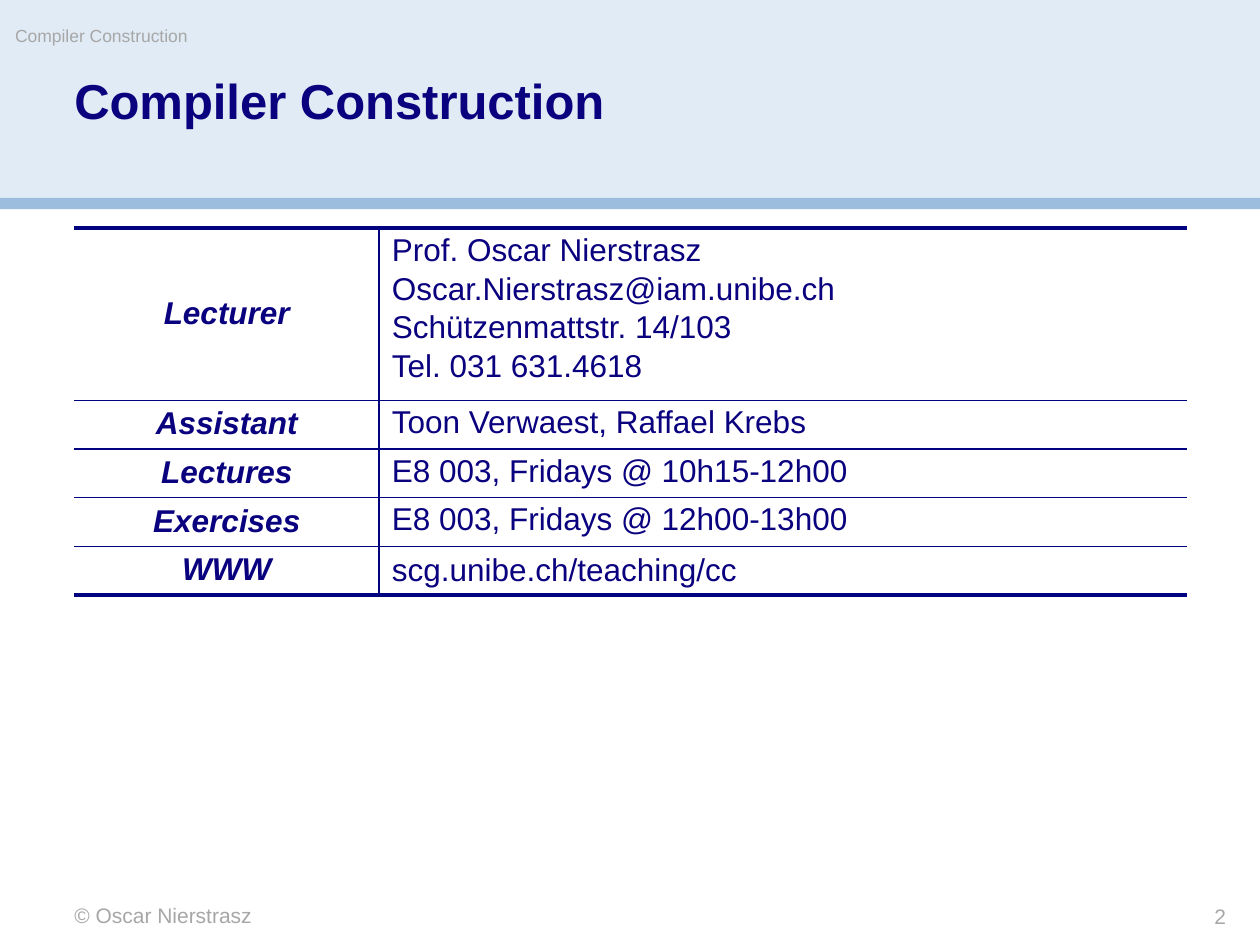
from pptx import Presentation
from pptx.dml.color import RGBColor
from pptx.enum.shapes import MSO_SHAPE
from pptx.enum.text import MSO_ANCHOR, PP_ALIGN
from pptx.oxml.ns import qn
from pptx.util import Inches, Pt
from lxml.etree import SubElement

NAVY = "0A017F"
RULE = "00027F"
GREY = "A7A7A7"

ROWS = [
    ("Lecturer", ["Prof. Oscar Nierstrasz", "Oscar.Nierstrasz@iam.unibe.ch",
                  "Schützenmattstr. 14/103", "Tel. 031 631.4618"]),
    ("Assistant", ["Toon Verwaest, Raffael Krebs"]),
    ("Lectures", ["E8 003, Fridays @ 10h15-12h00"]),
    ("Exercises", ["E8 003, Fridays @ 12h00-13h00"]),
    ("WWW", ["scg.unibe.ch/teaching/cc"]),
]


def rgb(value):
    return RGBColor.from_string(value)


def add_run(p, text, size, color, bold=False, italic=False):
    r = p.add_run()
    r.text = text
    r.font.name = "Arial"
    r.font.size = Pt(size)
    r.font.bold = bold
    r.font.italic = italic
    r.font.color.rgb = rgb(color)


def add_band(s, top, height, color):
    sp = s.shapes.add_shape(MSO_SHAPE.RECTANGLE, 0, Inches(top), Inches(10), Inches(height))
    sp.shadow.inherit = False
    sp.fill.solid()
    sp.fill.fore_color.rgb = rgb(color)
    sp.line.fill.background()


def add_text(s, box, text, size, color, bold=False, align=PP_ALIGN.LEFT, spacing=1.0, wrap=True):
    tf = s.shapes.add_textbox(*map(Inches, box)).text_frame
    tf.margin_left = tf.margin_top = tf.margin_right = tf.margin_bottom = 0
    tf.word_wrap = wrap
    p = tf.paragraphs[0]
    p.alignment = align
    p.line_spacing = spacing
    add_run(p, text, size, color, bold)


def set_borders(cell, **widths):
    tc_pr = cell._tc.get_or_add_tcPr()
    for i, side in enumerate("LRTB"):
        width = widths.get(side, 0)
        ln = tc_pr.makeelement(qn(f"a:ln{side}"), {"w": str(Pt(width))})
        if width:
            fill = SubElement(ln, qn("a:solidFill"))
            SubElement(fill, qn("a:srgbClr"), val=RULE)
        else:
            SubElement(ln, qn("a:noFill"))
        tc_pr.insert(i, ln)


def fill_cell(cell, lines, align, anchor, emphasis):
    cell.fill.background()
    cell.vertical_anchor = anchor
    cell.margin_left = cell.margin_right = Inches(0.1)
    cell.margin_top = cell.margin_bottom = Inches(0.05)
    tf = cell.text_frame
    for i, line in enumerate(lines):
        p = tf.add_paragraph() if i else tf.paragraphs[0]
        p.alignment = align
        p.line_spacing = 0.95
        p.space_before = Pt(3.1 if i else 0)
        add_run(p, line, 18, NAVY, emphasis, emphasis)


def add_course_table(s):
    frame = s.shapes.add_table(len(ROWS), 2, Inches(0.59), Inches(1.81), Inches(8.83), Inches(2.77))
    table = frame.table
    table.first_row = table.horz_banding = False
    for column, width in zip(table.columns, (2.42, 6.41)):
        column.width = Inches(width)
    last = len(ROWS) - 1
    for i, (label, lines) in enumerate(ROWS):
        table.rows[i].height = Inches(0.36 if i else 1.31)
        top = 1 if i else 2.25
        bottom = 2.25 if i == last else 1
        head, body = table.cell(i, 0), table.cell(i, 1)
        fill_cell(head, [label], PP_ALIGN.CENTER, MSO_ANCHOR.MIDDLE, True)
        fill_cell(body, lines, PP_ALIGN.LEFT,
                  MSO_ANCHOR.BOTTOM if i == last else MSO_ANCHOR.TOP, False)
        set_borders(head, R=1, T=top, B=bottom)
        set_borders(body, L=1, T=top, B=bottom)


def main():
    prs = Presentation()
    prs.slide_width, prs.slide_height = Inches(10), Inches(7.5)
    s = prs.slides.add_slide(prs.slide_layouts[6])
    add_band(s, 0, 1.58, "E1EBF5")
    add_band(s, 1.57, 0.09, "9CBDDE")
    add_text(s, (0.59, 0.61, 8.83, 0.89), "Compiler Construction", 28, NAVY, bold=True, spacing=0.9)
    add_text(s, (0.59, 7.16, 4.17, 0.2), "© Oscar Nierstrasz", 12, GREY)
    add_text(s, (0.12, 0.2, 5.9, 0.28), "Compiler Construction", 10, GREY, wrap=False)
    add_course_table(s)
    add_text(s, (8.25, 7.17, 1.48, 0.2), "2", 12, GREY, align=PP_ALIGN.RIGHT)
    prs.save("out.pptx")


if __name__ == "__main__":
    main()
